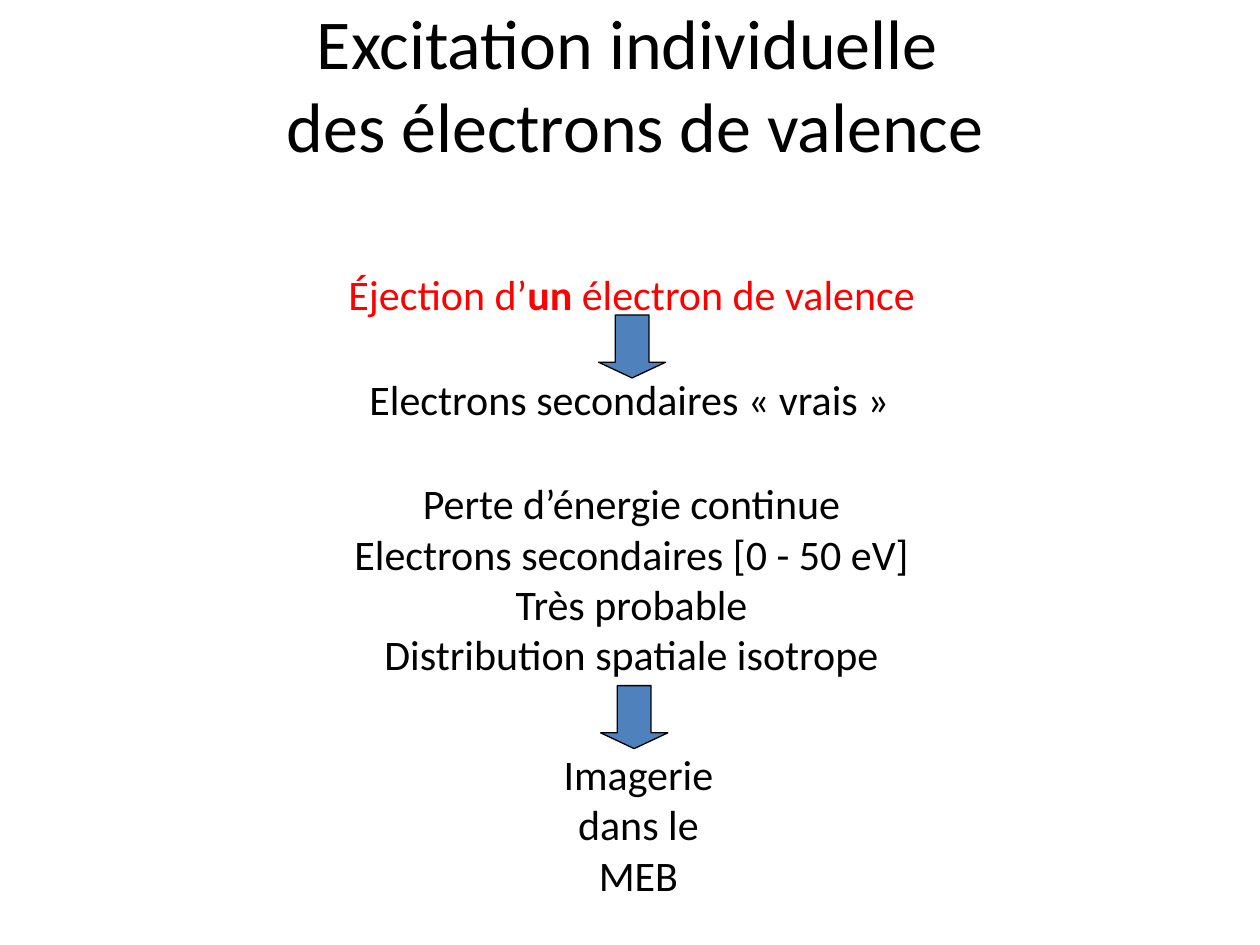
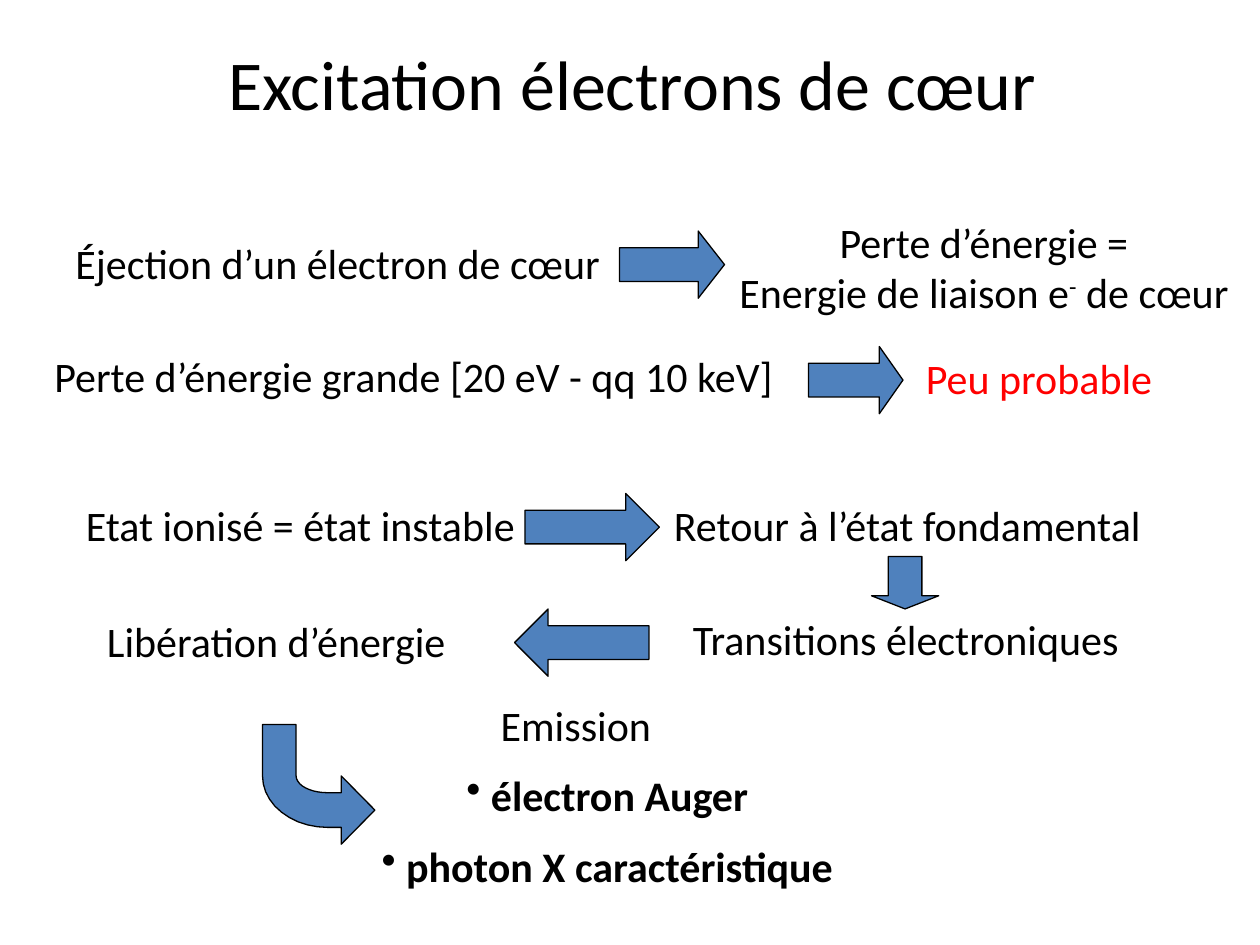
import math

import pptx
import pptx.dml.color
import pptx.enum.shapes
import pptx.enum.text
import pptx.util
from lxml import etree
from pptx.oxml.ns import qn

COLS, ROWS = 120, 90  # grid over a 10 x 7.5 inch slide
HEX = {"ink": "000000", "red": "FF0000", "blue": "4F81BD"}
KIND = pptx.enum.shapes.MSO_SHAPE
ALIGN = pptx.enum.text.PP_ALIGN
ANCHOR = pptx.enum.text.MSO_ANCHOR
FIT = pptx.enum.text.MSO_AUTO_SIZE
BAND = 6.4  # arrow breadth, in grid units
BOLD = {"bold": True}


class Deck:
    def __init__(self):
        self.file = pptx.Presentation()
        self.file.slide_width = pptx.util.Inches(10)
        self.file.slide_height = pptx.util.Inches(7.5)
        self.unit = self.file.slide_width // COLS
        self.page = None

    def grid(self, *sizes):
        return [round(size * self.unit) for size in sizes]

    def rgb(self, name):
        return pptx.dml.color.RGBColor.from_string(HEX[name])

    def slide(self, title, col, row, wide, high):
        self.page = self.file.slides.add_slide(self.file.slide_layouts[6])
        self.text([title], col, row, wide, high, size=40, align=ALIGN.CENTER, wrap=True,
                  frame={"vertical_anchor": ANCHOR.MIDDLE, "auto_size": FIT.NONE})

    def text(self, paras, col, row, wide, high=6, size=24, color="ink",
             align=ALIGN.LEFT, wrap=False, frame=None, gap=0):
        """Each paragraph is a string or a list of (text, format) runs."""
        box = self.page.shapes.add_textbox(*self.grid(col, row, wide, high)).text_frame
        look = {"word_wrap": wrap, "auto_size": FIT.SHAPE_TO_FIT_TEXT, **(frame or {})}
        for key, value in look.items():
            setattr(box, key, value)
        for num, runs in enumerate(paras):
            para = box.add_paragraph() if num else box.paragraphs[0]
            para.alignment = align
            para.space_before = pptx.util.Pt(gap)
            for words, style in [(runs, {})] if isinstance(runs, str) else runs:
                self.run(para, words, size, color, style)
        return box

    def run(self, para, words, size, color, style):
        for num, line in enumerate(words.split("\n")):
            if num:
                para.add_line_break()
            part = para.add_run()
            part.text = line
            part.font.color.rgb = self.rgb(color)
            look = {"name": "Calibri", "size": pptx.util.Pt(size), **style}
            lift = look.pop("lift", 0)
            for key, value in look.items():
                setattr(part.font, key, value)
            if lift:
                part.font._element.set("baseline", str(lift * 1000))

    def bullet(self, para):
        para.level = 1
        props = para._p.get_or_add_pPr()
        props.set("marL", str(6 * self.unit))
        props.set("indent", "0")
        etree.SubElement(props, qn("a:buChar")).set("char", "•")

    def paint(self, shape):
        shape.shadow.inherit = False
        shape.fill.solid()
        shape.fill.fore_color.rgb = self.rgb("blue")
        shape.line.color.rgb = self.rgb("ink")
        shape.line.width = pptx.util.Pt(0.75)

    def arrow(self, kind, col, row, span):
        """Straight arrow whose head takes a quarter of its span."""
        wide, high = (BAND, span) if kind == KIND.DOWN_ARROW else (span, BAND)
        shape = self.page.shapes.add_shape(kind, *self.grid(col, row, wide, high))
        shape.adjustments[0] = 0.5
        shape.adjustments[1] = span / 4 / min(wide, high)
        self.paint(shape)

    def bend(self, col, row):
        """Arrow that drops, then turns right along two quarter ellipses."""
        hub = (6.2, 4.9)

        def arc(wide, high, start, step):
            turns = [math.radians(start + step * num) for num in range(11)]
            return [(hub[0] - wide * math.cos(turn), hub[1] + high * math.sin(turn))
                    for turn in turns]

        head = [(7.5, 4.9), (10.7, 8.15), (7.5, 11.4), (7.5, 9.8)]
        dots = [(0, 0), (3.2, 0), *arc(3, 1.6, 0, 9), (7.5, 6.5), *head, *arc(6.2, 4.9, 90, -9)]
        fine = [(x * 100, y * 100) for x, y in dots]
        form = self.page.shapes.build_freeform(*fine[0], scale=self.unit / 100)
        form.add_line_segments(fine[1:], close=True)
        self.paint(form.convert_to_shape(*self.grid(col, row)))


def valence(deck):
    deck.slide("Excitation individuelle \ndes électrons de valence", 0, 0.4, 121, 15)
    # Cause and first effect
    deck.text([[("Éjection d’", {}), ("un", BOLD), (" électron de valence", {})]],
              32, 25, 57, color="red")
    deck.arrow(KIND.DOWN_ARROW, 57, 30, 6)
    deck.text(["Electrons secondaires «\u00a0vrais\u00a0»".replace("\u00a0", " ")], 34, 35, 52)
    # Properties and use
    deck.text(["Perte d’énergie continue", "Electrons secondaires [0 - 50 eV]",
               "Très probable", "Distribution spatiale isotrope"],
              32.3, 44.9, 55.7, 20.4, align=ALIGN.CENTER)
    deck.arrow(KIND.DOWN_ARROW, 57.2, 65.3, 6)
    deck.text(["Imagerie dans le MEB"], 50.3, 70.7, 21, 15.7, align=ALIGN.CENTER, wrap=True)


def core(deck):
    deck.slide("Excitation électrons de cœur", 9.2, 0.4, 102, 15)
    # Ejection and energy loss
    deck.text(["Éjection d’un électron de cœur"], 6, 22, 53)
    deck.arrow(KIND.RIGHT_ARROW, 59, 22, 10)
    deck.text(["Perte d’énergie =",
               [("Energie de liaison e", {}), ("-", {"lift": 30}), (" de cœur", {})]],
              68.9, 20, 49.6, 11, align=ALIGN.CENTER)
    deck.text(["Perte d’énergie grande [20 eV - qq 10 keV]"], 4, 32.8, 72)
    deck.arrow(KIND.RIGHT_ARROW, 77, 33, 9)
    deck.text(["Peu probable"], 87, 33, 24.2, color="red")
    # Return to the ground state
    deck.text(["Etat ionisé = état instable"], 7, 47, 43.7)
    deck.arrow(KIND.RIGHT_ARROW, 50, 47, 12.8)
    deck.text(["Retour à l’état fondamental"], 63, 47, 50, wrap=True)
    deck.arrow(KIND.DOWN_ARROW, 83, 53, 5)
    deck.text(["Transitions électroniques"], 64.8, 57.8, 43.4)
    deck.arrow(KIND.LEFT_ARROW, 49, 58, 12.8)
    deck.text(["Libération d’énergie"], 9, 58, 35.2)
    # Emission
    box = deck.text(["Emission", [(" ", {}), ("électron Auger", BOLD)],
                     [(" ", {}), ("photon X caractéristique", BOLD)]],
                    27, 66, 55.7, 20.6, align=ALIGN.CENTER, wrap=True, gap=11.5)
    for para in box.paragraphs[1:]:
        deck.bullet(para)
    deck.bend(25, 69)


def main():
    deck = Deck()
    valence(deck)
    core(deck)
    deck.file.save("out.pptx")


if __name__ == "__main__":
    main()
